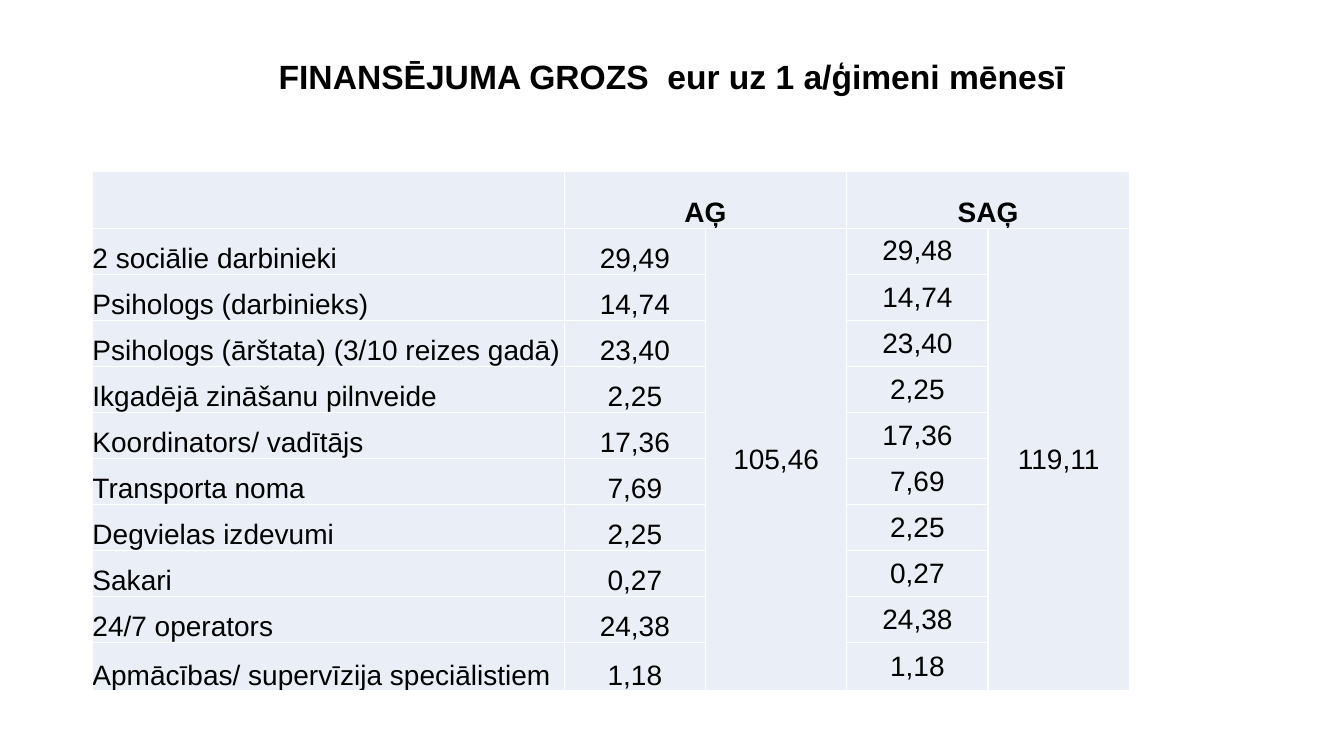
import pptx
import pptx.dml.color
import pptx.enum.text
import pptx.oxml
import pptx.oxml.ns
import pptx.util

Cm = pptx.util.Cm
Pt = pptx.util.Pt
ALIGN = pptx.enum.text.PP_ALIGN
ANCHOR = pptx.enum.text.MSO_ANCHOR

EXPENSES = [
    ("2 sociālie darbinieki", "29,49", "29,48"),
    ("Psihologs (darbinieks)", "14,74", "14,74"),
    ("Psihologs (ārštata) (3/10 reizes gadā)", "23,40", "23,40"),
    ("Ikgadējā zināšanu pilnveide", "2,25", "2,25"),
    ("Koordinators/ vadītājs", "17,36", "17,36"),
    ("Transporta noma", "7,69", "7,69"),
    ("Degvielas izdevumi", "2,25", "2,25"),
    ("Sakari", "0,27", "0,27"),
    ("24/7 operators", "24,38", "24,38"),
    ("Apmācības/ supervīzija speciālistiem", "1,18", "1,18"),
]
GROUPS = [("AĢ", "105,46"), ("SAĢ", "119,11")]


def color(value):
    return pptx.dml.color.RGBColor.from_string(value)


class BudgetSlide:
    """Holds the style and the current slide."""

    font = "Arial"
    ink = "000000"
    cell_fill = "EAEFF7"
    grid = "FFFFFF"

    def __init__(self, deck):
        self.slide = deck.slides.add_slide(deck.slide_layouts[6])

    def set_text(self, frame, text, size, bold=False, align=ALIGN.CENTER):
        frame.text = text
        paragraph = frame.paragraphs[0]
        paragraph.alignment = align
        for run in paragraph.runs:
            run.font.name = self.font
            run.font.size = Pt(size)
            run.font.bold = bold
            run.font.color.rgb = color(self.ink)
        return paragraph

    def title(self, text, left, top, width, height):
        frame = self.slide.shapes.add_textbox(left, top, width, height).text_frame
        frame.word_wrap = True
        frame.vertical_anchor = ANCHOR.MIDDLE
        self.set_text(frame, text, 24, bold=True).line_spacing = 0.9

    def table(self, left, top, widths, heights):
        table = self.slide.shapes.add_table(
            len(heights), len(widths), left, top, sum(widths), sum(heights)).table
        for column, width in zip(table.columns, widths):
            column.width = width
        for row, height in zip(table.rows, heights):
            row.height = height
        for cell in table.iter_cells():
            self.style_cell(cell)
        return table

    def style_cell(self, cell):
        cell.margin_left = cell.margin_right = 0
        cell.margin_top = cell.margin_bottom = 0
        properties = cell._tc.get_or_add_tcPr()
        for side in ("lnL", "lnR", "lnT", "lnB"):
            properties.append(pptx.oxml.parse_xml(
                f'<a:{side} {pptx.oxml.ns.nsdecls("a")} w="{Pt(1)}"><a:solidFill>'
                f'<a:srgbClr val="{self.grid}"/></a:solidFill></a:{side}>'))
        cell.fill.solid()
        cell.fill.fore_color.rgb = color(self.cell_fill)

    def cell(self, cell, text, anchor=ANCHOR.BOTTOM, **style):
        cell.vertical_anchor = anchor
        self.set_text(cell.text_frame, text, 20, **style)


def main():
    deck = pptx.Presentation()
    deck.slide_width, deck.slide_height = Cm(33.87), Cm(19.05)
    budget = BudgetSlide(deck)

    # Heading
    budget.title("FINANSĒJUMA GROZS  eur uz 1 a/ģimeni mēnesī",
                 Cm(2.33), Cm(1.02), Cm(29.21), Cm(1.92))

    # Table grid: expense names, then an amount and a total column per group
    basket = budget.table(
        Cm(2.33), Cm(4.33),
        [Cm(11.89)] + [Cm(3.56)] * 4,
        [Cm(1.42)] + [Cm(1.16)] * 9 + [Cm(1.22)])

    # Group headers and merged totals
    for index, (group, total) in enumerate(GROUPS):
        amount_col = 1 + 2 * index
        total_col = amount_col + 1
        header = basket.cell(0, amount_col)
        header.merge(basket.cell(0, total_col))
        budget.cell(header, group, bold=True)
        total_cell = basket.cell(1, total_col)
        total_cell.merge(basket.cell(len(EXPENSES), total_col))
        budget.cell(total_cell, total, ANCHOR.MIDDLE)

    # Expense rows
    for row, (expense, ag_amount, sag_amount) in enumerate(EXPENSES, 1):
        budget.cell(basket.cell(row, 0), expense, align=ALIGN.LEFT)
        budget.cell(basket.cell(row, 1), ag_amount)
        budget.cell(basket.cell(row, 3), sag_amount, ANCHOR.MIDDLE)

    deck.save("out.pptx")


if __name__ == "__main__":
    main()
